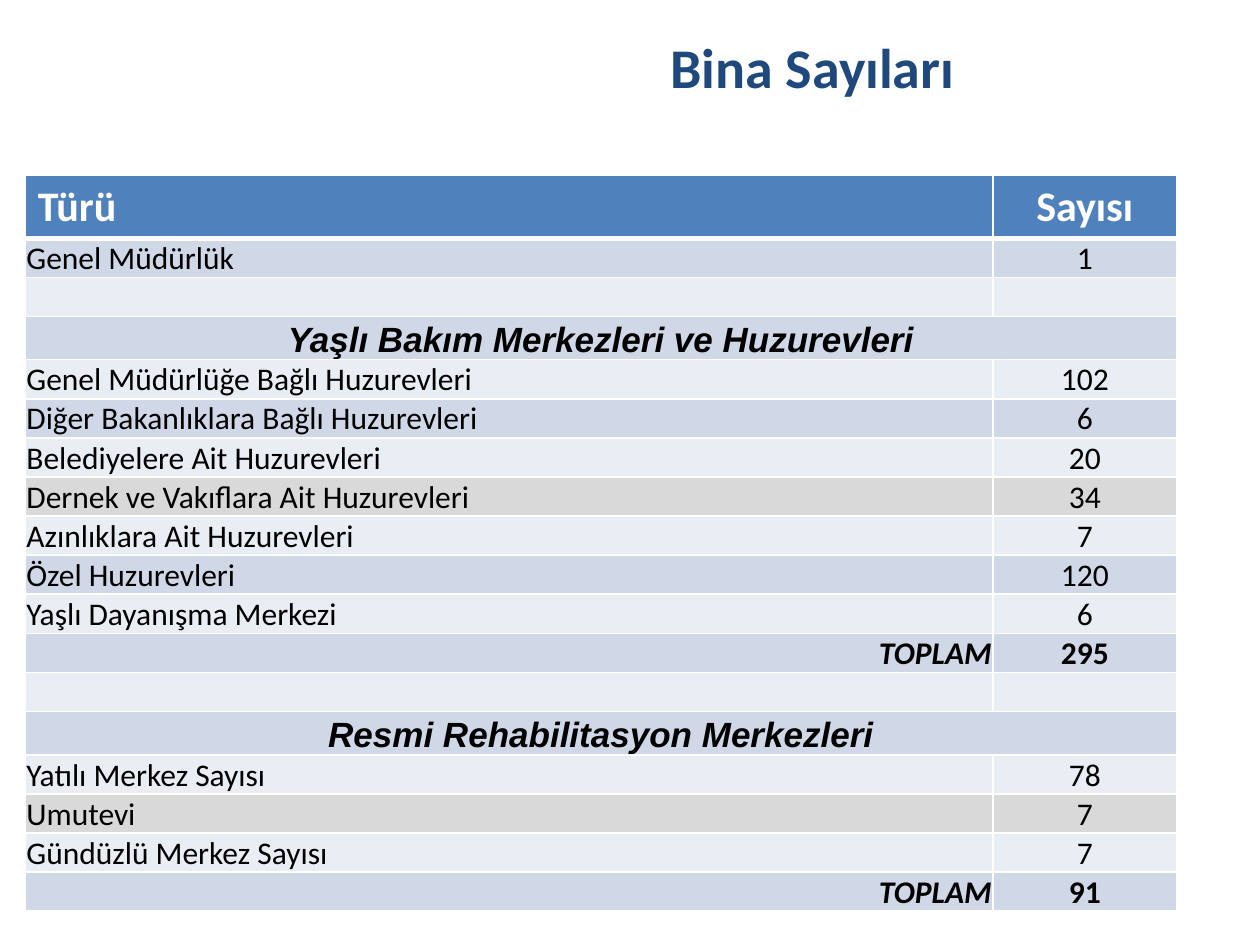
from lxml.etree import SubElement
from pptx import Presentation
from pptx.dml.color import RGBColor
from pptx.enum.text import MSO_ANCHOR as Anchor, PP_ALIGN as Align
from pptx.oxml.ns import qn
from pptx.util import Inches, Pt

NAVY = RGBColor(0x1F, 0x49, 0x7D)
BLUE = RGBColor(0x4F, 0x81, 0xBD)
DARK_BAND = RGBColor(0xD0, 0xD8, 0xE8)
LIGHT_BAND = RGBColor(0xE9, 0xED, 0xF4)
GREY = RGBColor(0xD9, 0xD9, 0xD9)
WHITE = RGBColor(0xFF, 0xFF, 0xFF)
BLACK = RGBColor(0, 0, 0)

COLUMN_WIDTHS = (7.68, 1.46)
ROWS = [
    ("header", "Türü", "Sayısı"),
    ("item", "Genel Müdürlük", "1"),
    ("empty", "", ""),
    ("section", "Yaşlı Bakım Merkezleri ve Huzurevleri", ""),
    ("item", "Genel Müdürlüğe Bağlı Huzurevleri", "102"),
    ("item", "Diğer Bakanlıklara Bağlı Huzurevleri", "6"),
    ("item", "Belediyelere Ait Huzurevleri", "20"),
    ("grey", "Dernek ve Vakıflara Ait Huzurevleri", "34"),
    ("item", "Azınlıklara Ait Huzurevleri", "7"),
    ("item", "Özel Huzurevleri", "120"),
    ("item", "Yaşlı Dayanışma Merkezi", "6"),
    ("total", "TOPLAM", "295"),
    ("empty", "", ""),
    ("section", "Resmi Rehabilitasyon Merkezleri", ""),
    ("item", "Yatılı Merkez Sayısı", "78"),
    ("grey", "Umutevi", "7"),
    ("item", "Gündüzlü Merkez Sayısı", "7"),
    ("total", "TOPLAM", "91"),
]
ROW_HEIGHTS = {"header": 0.48, "section": 0.33}
LABEL_ALIGN = {"section": Align.CENTER, "total": Align.RIGHT}


class SlideBuilder:
    font = "Calibri"
    heading_font = "Arial"

    def __init__(self, slide):
        self.slide = slide

    def add_text(self, paragraph, text, size, color, align=Align.LEFT,
                 bold=False, italic=False, font=None):
        paragraph.alignment = align
        run = paragraph.add_run()
        run.text = text
        run.font.name = font or self.font
        run.font.size = Pt(size)
        run.font.bold = bold
        run.font.italic = italic
        run.font.color.rgb = color

    def title(self, text, left, top, width, height):
        box = self.slide.shapes.add_textbox(
            Inches(left), Inches(top), Inches(width), Inches(height))
        box.text_frame.word_wrap = True
        self.add_text(box.text_frame.paragraphs[0], text, 32, NAVY,
                      Align.CENTER, bold=True)

    def border(self, cell, side, width):
        line = SubElement(cell._tc.get_or_add_tcPr(), qn(f"a:ln{side}"),
                          w=str(Pt(width)))
        fill = SubElement(line, qn("a:solidFill"))
        SubElement(fill, qn("a:srgbClr"), val=str(WHITE))

    def cell(self, cell, kind, text, column, band):
        header = kind == "header"
        section = kind == "section"
        widths = {"L": 1, "R": 1, "T": 3 if band == 1 else 1,
                  "B": 3 if header else 1}
        for side, width in widths.items():
            self.border(cell, side, width)
        cell.fill.solid()
        cell.fill.fore_color.rgb = (
            BLUE if header else GREY if kind == "grey"
            else DARK_BAND if band % 2 else LIGHT_BAND)
        if not header:
            cell.vertical_anchor = Anchor.BOTTOM
            cell.margin_left = cell.margin_right = cell.margin_top = Inches(0.01)
            cell.margin_bottom = 0
        paragraph = cell.text_frame.paragraphs[0]
        if not text:
            SubElement(paragraph._p, qn("a:endParaRPr"), sz="1800")
            return
        self.add_text(
            paragraph, text,
            24 if header else 20 if section else 18,
            WHITE if header else BLACK,
            Align.CENTER if column else LABEL_ALIGN.get(kind, Align.LEFT),
            bold=kind in ("header", "section", "total"),
            italic=section or (kind == "total" and column == 0),
            font=self.heading_font if section else self.font)

    def table(self, rows, left, top, column_widths):
        heights = [ROW_HEIGHTS.get(kind, 0.3) for kind, *_ in rows]
        table = self.slide.shapes.add_table(
            len(rows), len(column_widths), Inches(left), Inches(top),
            Inches(sum(column_widths)), Inches(sum(heights))).table
        for column, width in zip(table.columns, column_widths):
            column.width = Inches(width)
        for index, (kind, *texts) in enumerate(rows):
            table.rows[index].height = Inches(heights[index])
            for column, text in enumerate(texts):
                self.cell(table.cell(index, column), kind, text, column, index)
            if kind == "section":
                table.cell(index, 0).merge(table.cell(index, 1))


def main():
    presentation = Presentation()
    presentation.slide_width = Inches(10)
    presentation.slide_height = Inches(7.5)
    slide = presentation.slides.add_slide(presentation.slide_layouts[6])
    builder = SlideBuilder(slide)
    builder.title("Bina Sayıları", 2.73, 0.21, 7.44, 0.94)
    builder.table(ROWS, 0.2, 1.39, COLUMN_WIDTHS)
    presentation.save("out.pptx")


if __name__ == "__main__":
    main()
